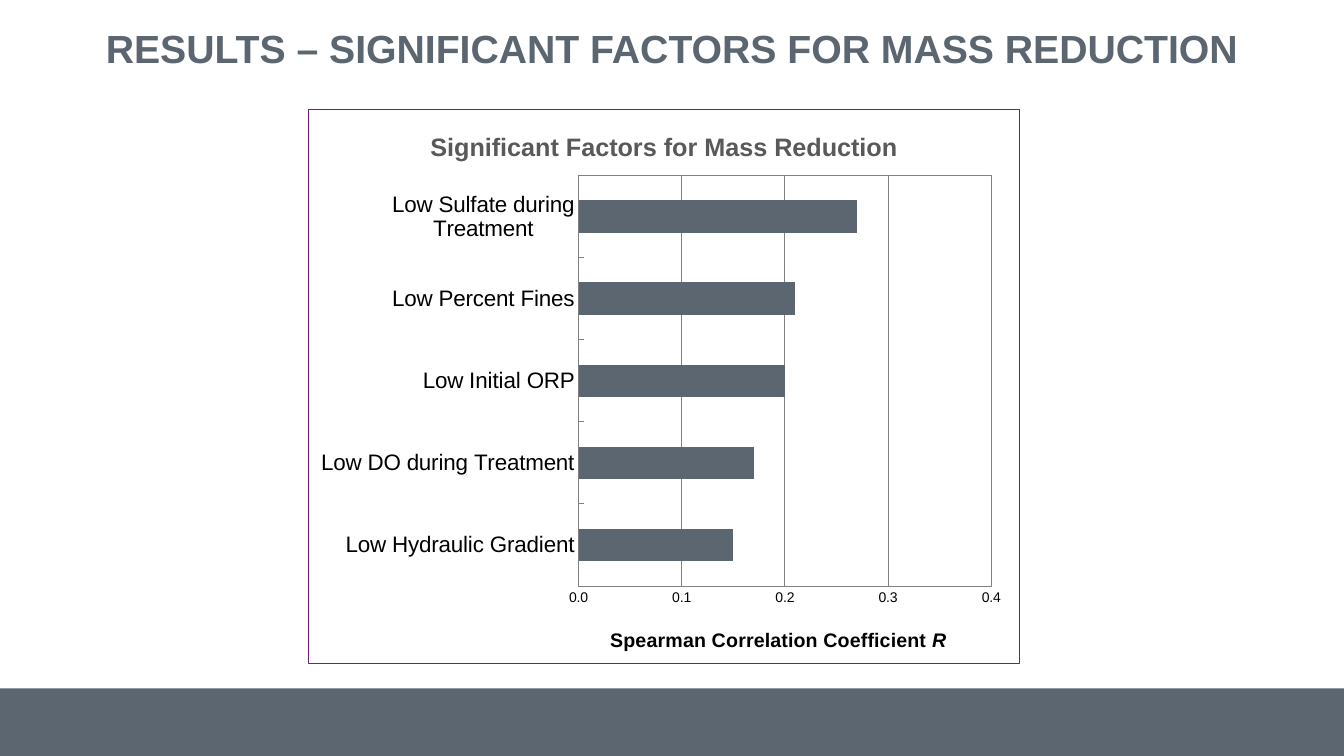
from dataclasses import dataclass

from lxml import etree
from pptx import Presentation
from pptx import util as u
from pptx.chart.data import CategoryChartData
from pptx.dml.color import RGBColor
from pptx.enum import chart as ch, shapes, text
from pptx.oxml import parse_xml
from pptx.oxml.ns import nsdecls, qn


@dataclass(frozen=True)
class Theme:
    font: str = "Arial"
    slate: str = "5B6670"
    purple: str = "6B207D"
    grey: str = "808080"
    heading_grey: str = "595959"
    black: str = "000000"
    title_size: float = 28
    chart_title_size: float = 18
    category_size: float = 16
    axis_title_size: float = 14
    tick_size: float = 10
    line_width: float = 0.75


@dataclass(frozen=True)
class Factor:
    name: str
    correlation: float


THEME = Theme()
FACTORS = [
    Factor("Low Hydraulic Gradient", 0.15),
    Factor("Low DO during Treatment", 0.17),
    Factor("Low Initial ORP", 0.2),
    Factor("Low Percent Fines", 0.21),
    Factor("Low Sulfate during Treatment", 0.27),
]


def style_font(font, size: float, color: str, bold: bool = False) -> None:
    font.name = THEME.font
    font.size = u.Pt(size)
    font.bold = bold
    font.color.rgb = RGBColor.from_string(color)


def style_line(line, color: str) -> None:
    line.color.rgb = RGBColor.from_string(color)
    line.width = u.Pt(THEME.line_width)


def outline(color: str) -> etree._Element:
    """Unfilled chart-area properties with a thin solid border."""
    return parse_xml(
        f'<c:spPr {nsdecls("c", "a")}><a:noFill/>'
        f'<a:ln w="{u.Pt(THEME.line_width)}"><a:solidFill>'
        f'<a:srgbClr val="{color}"/></a:solidFill></a:ln></c:spPr>'
    )


def set_layout(element, index: int, inner: bool = False, **fractions: float) -> None:
    """Place a chart part by fractions of the chart's size."""
    for old in element.findall(qn("c:layout")):
        element.remove(old)
    target = '<c:layoutTarget val="inner"/>' if inner else ""
    modes = "".join(f'<c:{key}Mode val="edge"/>' for key in fractions if key in "xy")
    values = "".join(f'<c:{key} val="{value}"/>' for key, value in fractions.items())
    element.insert(index, parse_xml(
        f'<c:layout {nsdecls("c")}><c:manualLayout>{target}{modes}{values}'
        "</c:manualLayout></c:layout>"
    ))


def add_footer_band(slide) -> None:
    band = slide.shapes.add_shape(
        shapes.MSO_SHAPE.RECTANGLE,
        u.Inches(0), u.Inches(6.83), u.Inches(13.33), u.Inches(0.67),
    )
    band.shadow.inherit = False
    band.fill.solid()
    band.fill.fore_color.rgb = RGBColor.from_string(THEME.slate)
    band.line.fill.background()


def add_title(slide) -> None:
    frame = slide.shapes.add_textbox(
        u.Inches(1.05), u.Inches(0.1), u.Inches(11.63), u.Inches(0.8)
    ).text_frame
    frame.word_wrap = True
    frame.margin_left = 0
    frame.vertical_anchor = text.MSO_ANCHOR.MIDDLE
    heading = frame.paragraphs[0]
    heading.text = "RESULTS – SIGNIFICANT FACTORS FOR MASS REDUCTION"
    heading.line_spacing = 0.9
    style_font(heading.font, THEME.title_size, THEME.slate, bold=True)


def style_axes(chart) -> None:
    factors, correlation = chart.category_axis, chart.value_axis
    for axis, size in ((factors, THEME.category_size), (correlation, THEME.tick_size)):
        axis.major_tick_mark = ch.XL_TICK_MARK.INSIDE
        axis.minor_tick_mark = ch.XL_TICK_MARK.NONE
        style_line(axis.format.line, THEME.grey)
        style_font(axis.tick_labels.font, size, THEME.black)

    correlation.minimum_scale, correlation.maximum_scale = 0, 0.4
    correlation.major_unit = 0.1
    correlation.tick_labels.number_format = "0.0"
    correlation.tick_labels.number_format_is_linked = False
    correlation.has_major_gridlines = True
    style_line(correlation.major_gridlines.format.line, THEME.grey)

    caption = correlation.axis_title.text_frame.paragraphs[0]
    style_font(caption.font, THEME.axis_title_size, THEME.black, bold=True)
    for words, italic in (("Spearman Correlation Coefficient ", False), ("R", True)):
        run = caption.add_run()
        run.text = words
        style_font(run.font, THEME.axis_title_size, THEME.black, bold=True)
        run.font.italic = italic
    set_layout(correlation.axis_title._element, 1, x=0.42, y=0.93)


def add_factor_chart(slide) -> None:
    data = CategoryChartData()
    data.categories = [factor.name for factor in FACTORS]
    data.add_series("Series 1", [factor.correlation for factor in FACTORS])
    chart = slide.shapes.add_chart(
        ch.XL_CHART_TYPE.BAR_CLUSTERED,
        u.Inches(3.05), u.Inches(1.08), u.Inches(7.07), u.Inches(5.51), data,
    ).chart
    style_font(chart.font, THEME.tick_size, THEME.black)
    chart.has_legend = False

    chart.has_title = True
    heading = chart.chart_title.text_frame.paragraphs[0]
    heading.text = "Significant Factors for Mass Reduction"
    style_font(heading.font, THEME.chart_title_size, THEME.heading_grey, bold=True)

    bars = chart.plots[0]
    bars.gap_width = 150
    bars.vary_by_categories = False
    bars.series[0].format.fill.solid()
    bars.series[0].format.fill.fore_color.rgb = RGBColor.from_string(THEME.slate)
    style_axes(chart)

    space = chart._chartSpace
    space.find(qn("c:txPr")).addprevious(outline(THEME.purple))
    plot_area = space.find(f'{qn("c:chart")}/{qn("c:plotArea")}')
    set_layout(plot_area, 0, inner=True, x=0.38, y=0.12, w=0.58, h=0.74)
    plot_area.append(outline(THEME.grey))


def main() -> None:
    deck = Presentation()
    deck.slide_width, deck.slide_height = u.Inches(13.33), u.Inches(7.5)
    slide = deck.slides.add_slide(deck.slide_layouts[6])
    add_footer_band(slide)
    add_title(slide)
    add_factor_chart(slide)
    deck.save("out.pptx")


if __name__ == "__main__":
    main()
